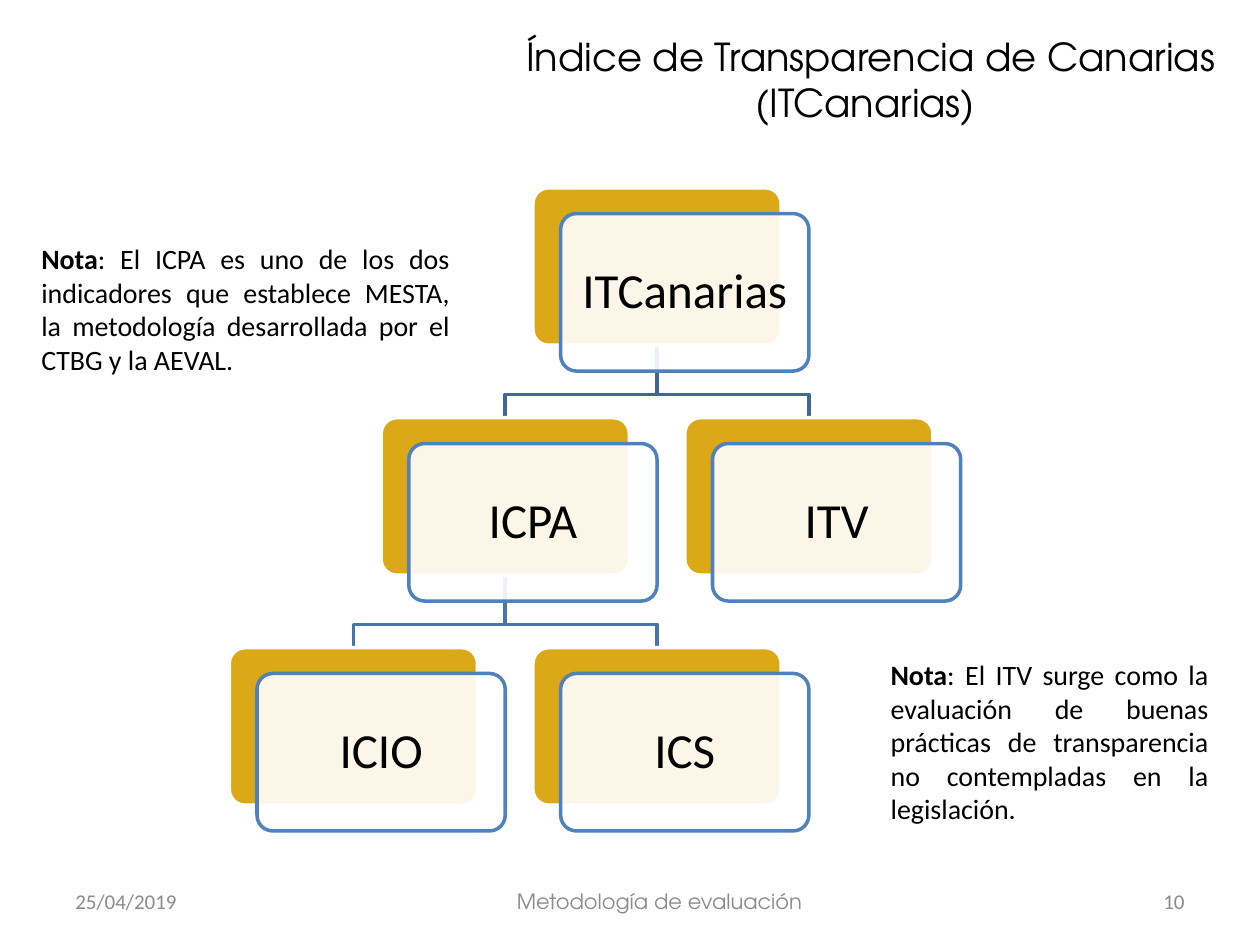
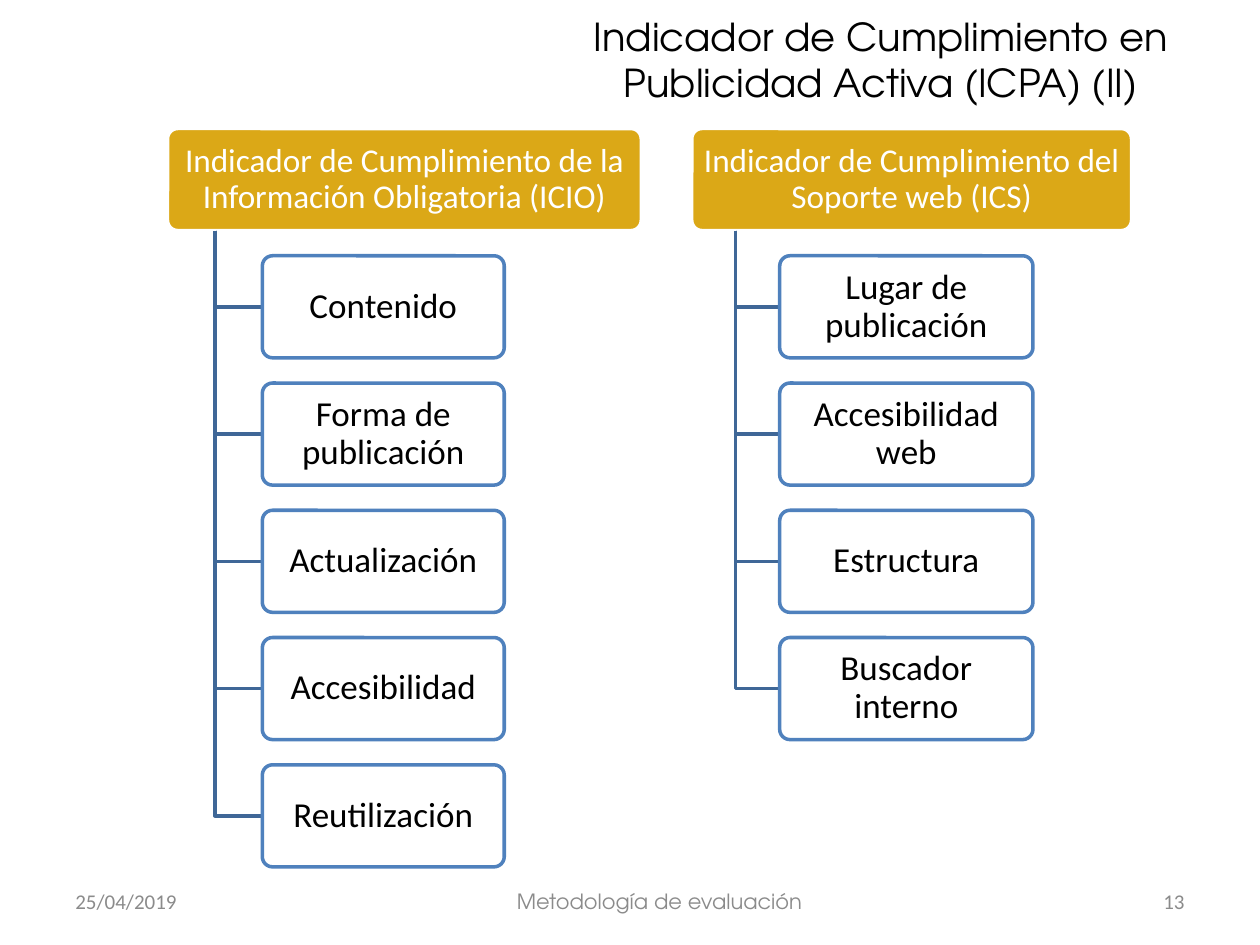
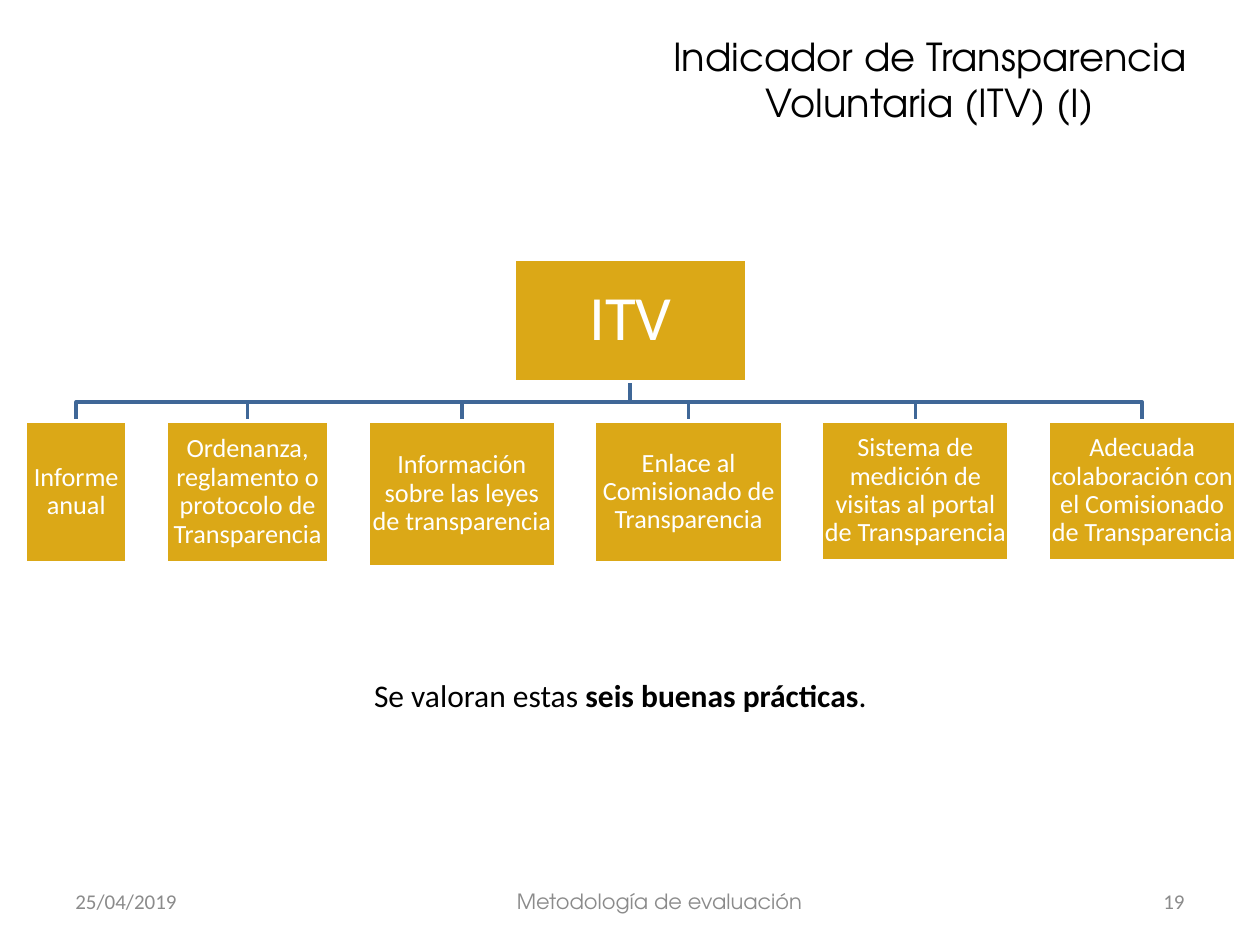
"""Three slides on the transparency index, its indicators and its good practices."""
from lxml import etree
from pptx import Presentation
from pptx import util as u
from pptx.dml.color import RGBColor
from pptx.enum import shapes, text
from pptx.oxml.ns import qn

COLUMNS, ROWS = 100, 75
GOLD, BLUE, WHITE, BLACK, GREY = "DBA817", "4F81BD", "FFFFFF", "000000", "8B8B8B"
DARK_LINK, LIGHT_LINK = "3F6797", "4875AC"
BODY_FONT, TITLE_FONT = "Calibri", "TeX Gyre Adventor"
LEFT, CENTER, RIGHT, JUSTIFY = (
    text.PP_ALIGN.LEFT, text.PP_ALIGN.CENTER, text.PP_ALIGN.RIGHT, text.PP_ALIGN.JUSTIFY)
MIDDLE, TOP = text.MSO_ANCHOR.MIDDLE, text.MSO_ANCHOR.TOP


def color(value):
    """Turn a hex string into a colour."""
    return RGBColor.from_string(value)


class Deck:
    """Hold the presentation, its style and the current slide."""

    def __init__(self):
        """Start an empty presentation of 10 by 7.5 inches."""
        self.presentation = Presentation()
        self.presentation.slide_width = u.Inches(10)
        self.presentation.slide_height = u.Inches(7.5)
        self.slide = None

    def x(self, columns):
        """Convert grid columns to a length."""
        return round(self.presentation.slide_width * columns / COLUMNS)

    def y(self, rows):
        """Convert grid rows to a length."""
        return round(self.presentation.slide_height * rows / ROWS)

    def area(self, left, top, width, height):
        """Convert a grid area to lengths."""
        return self.x(left), self.y(top), self.x(width), self.y(height)

    def new_slide(self, title, title_left, title_height, number):
        """Add a slide with its title and footer."""
        self.slide = self.presentation.slides.add_slide(self.presentation.slide_layouts[6])
        self.label((title_left, 0, COLUMNS - title_left, title_height), [title], 22,
                   align=CENTER, font=TITLE_FONT)
        footers = (
            (5, 10.3, "25/04/2019", LEFT, BODY_FONT),
            (18.5, 67.7, "Metodología de evaluación", CENTER, TITLE_FONT),
            (89.4, 5.6, str(number), RIGHT, BODY_FONT),
        )
        for left, width, words, align, font in footers:
            self.label((left, 69.5, width, 4), [words], 12, GREY, align, font)

    def fill_text(self, shape, parts, size, ink, align, font=BODY_FONT, spacing=None,
                  anchor=MIDDLE):
        """Set one paragraph run by run; a (words, True) part is bold."""
        frame = shape.text_frame
        frame.word_wrap = True
        frame.vertical_anchor = anchor
        paragraph = frame.paragraphs[0]
        paragraph.alignment = align
        paragraph.line_spacing = spacing
        for part in parts:
            words, bold = (part, False) if isinstance(part, str) else part
            run = paragraph.add_run()
            run.text = words
            run.font.name = font
            run.font.size = u.Pt(size)
            run.font.bold = bold
            run.font.color.rgb = color(ink)

    def label(self, area, parts, size, ink=BLACK, align=LEFT, font=BODY_FONT, anchor=MIDDLE):
        """Add a text box."""
        shape = self.slide.shapes.add_textbox(*self.area(*area))
        self.fill_text(shape, parts, size, ink, align, font, anchor=anchor)

    def box(self, area, fill, line, words="", size=20, inset=0.02, rounded=True, opacity=100):
        """Add a filled box with centred text."""
        kind = shapes.MSO_SHAPE.ROUNDED_RECTANGLE if rounded else shapes.MSO_SHAPE.RECTANGLE
        shape = self.slide.shapes.add_shape(kind, *self.area(*area))
        if rounded:
            shape.adjustments[0] = 0.1
        shape.shadow.inherit = False
        shape.fill.solid()
        shape.fill.fore_color.rgb = color(fill)
        if opacity < 100:
            tint = shape.element.spPr.find(".//" + qn("a:srgbClr"))
            etree.SubElement(tint, qn("a:alpha")).set("val", str(opacity * 1000))
        shape.line.color.rgb = color(line)
        shape.line.width = u.Pt(2)
        if words:
            frame = shape.text_frame
            frame.margin_left = frame.margin_right = u.Inches(inset)
            frame.margin_top = frame.margin_bottom = u.Inches(inset)
            ink = WHITE if fill == GOLD else BLACK
            self.fill_text(shape, [words], size, ink, CENTER, spacing=0.9)

    def gold_box(self, area, words="", **options):
        """Add a gold box with a white outline."""
        self.box(area, GOLD, WHITE, words, **options)

    def outlined_box(self, area, words, **options):
        """Add a translucent white box with a blue outline."""
        self.box(area, WHITE, BLUE, words, opacity=90, **options)

    def link(self, points, ink=DARK_LINK):
        """Draw an open bent line through grid points."""
        start, *others = [(self.x(column), self.y(row)) for column, row in points]
        builder = self.slide.shapes.build_freeform(*start, scale=1.0)
        builder.add_line_segments(others, close=False)
        shape = builder.convert_to_shape()
        shape.shadow.inherit = False
        shape.fill.background()
        shape.line.color.rgb = color(ink)
        shape.line.width = u.Pt(2)

    def branch(self, start, bend, end, ink=DARK_LINK):
        """Link a parent to a child below it through a horizontal bend."""
        self.link([start, (start[0], bend), (end[0], bend), end], ink)


def index_slide(deck):
    """Show the hierarchy of the index."""
    deck.new_slide("Índice de Transparencia de Canarias (ITCanarias) ", 38.2, 12.5, 10)
    width, height = 19.7, 12.5
    nodes = {"ITCanarias": (2, 0), "ICPA": (1, 1), "ICIO": (0, 2), "ICS": (2, 2), "ITV": (3, 1)}
    corners = {name: (18.2 + 12.05 * step, 14.9 + 18.25 * level)
               for name, (step, level) in nodes.items()}
    links = (("ITCanarias", "ITV", DARK_LINK), ("ICPA", "ICS", LIGHT_LINK),
             ("ICPA", "ICIO", LIGHT_LINK), ("ITCanarias", "ICPA", DARK_LINK))
    for parent, child, ink in links:
        (parent_left, parent_top), (child_left, child_top) = corners[parent], corners[child]
        bottom = parent_top + height
        deck.branch((parent_left + width / 2, bottom), bottom + 3.9,
                    (child_left + width / 2, child_top), ink)
    for name, (left, top) in corners.items():
        deck.gold_box((left, top, width, height))
        deck.outlined_box((left + 2.2, top + 2.05, width, height), name, size=28, inset=0.08)
    notes = (
        ((2.3, 18.7, 34.4, 11.8), ": El ICPA es uno de los dos indicadores que establece MESTA, "
         "la metodología desarrollada por el CTBG y la AEVAL."),
        ((69.7, 51.7, 27.2, 14.5), ": El ITV surge como la evaluación de buenas prácticas de "
         "transparencia no contempladas en la legislación."),
    )
    for area, words in notes:
        deck.label(area, [("Nota", True), words], 16, align=JUSTIFY, anchor=TOP)


def compliance_slide(deck):
    """List the criteria of both compliance indicators."""
    deck.new_slide("Indicador de Cumplimiento en Publicidad Activa (ICPA) (II)", 39.8, 9.4, 13)
    top, height, pitch = 10.2, 8.1, 10.1
    indicators = (
        (13.3, 37.6, 19.2, "Indicador de Cumplimiento de la Información Obligatoria (ICIO)",
         ("Contenido", "Forma de publicación", "Actualización", "Accesibilidad",
          "Reutilización")),
        (54.9, 34.9, 20.1, "Indicador de Cumplimiento del Soporte web (ICS)",
         ("Lugar de publicación", "Accesibilidad web", "Estructura", "Buscador interno")),
    )
    for left, width, criterion_width, heading, criteria in indicators:
        deck.gold_box((left, top, width, height), heading, size=19)
        spine, criterion_left = left + 0.1 * width, left + 0.2 * width
        for position, criterion in enumerate(criteria, 1):
            criterion_top = top + pitch * position
            middle = criterion_top + height / 2
            deck.link([(spine, top + height), (spine, middle), (criterion_left, middle)])
            deck.outlined_box((criterion_left, criterion_top, criterion_width, height), criterion)


def voluntary_slide(deck):
    """Show the six practices of the voluntary indicator."""
    deck.new_slide("Indicador de Transparencia Voluntaria (ITV) (I)", 47.6, 12.5, 19)
    practices = (
        ("Informe anual", 8.1, 11.3),
        ("Ordenanza, reglamento o protocolo de Transparencia", 12.9, 11.3),
        ("Información sobre las leyes de transparencia", 14.9, 11.6),
        ("Enlace al Comisionado de Transparencia", 14.9, 11.3),
        ("Sistema de medición de visitas al portal de Transparencia", 14.9, 11.1),
        ("Adecuada colaboración con el Comisionado de Transparencia", 14.9, 11.1),
    )
    left, top, gap = 2, 33.4, 3.1
    for words, width, height in practices:
        deck.branch((50, 30.3), 31.9, (left + width / 2, top))
        deck.gold_box((left, top, width, height), words, size=15, inset=0.01, rounded=False)
        left += width + gap
    deck.gold_box((40.8, 20.6, 18.5, 9.7), "ITV", size=36, rounded=False)
    deck.label((28.7, 53.2, 44.9, 4),
               ["Se valoran estas ", ("seis buenas prácticas", True), "."], 18, anchor=TOP)


def main():
    """Build and save the presentation."""
    deck = Deck()
    index_slide(deck)
    compliance_slide(deck)
    voluntary_slide(deck)
    deck.presentation.save("out.pptx")


if __name__ == "__main__":
    main()
